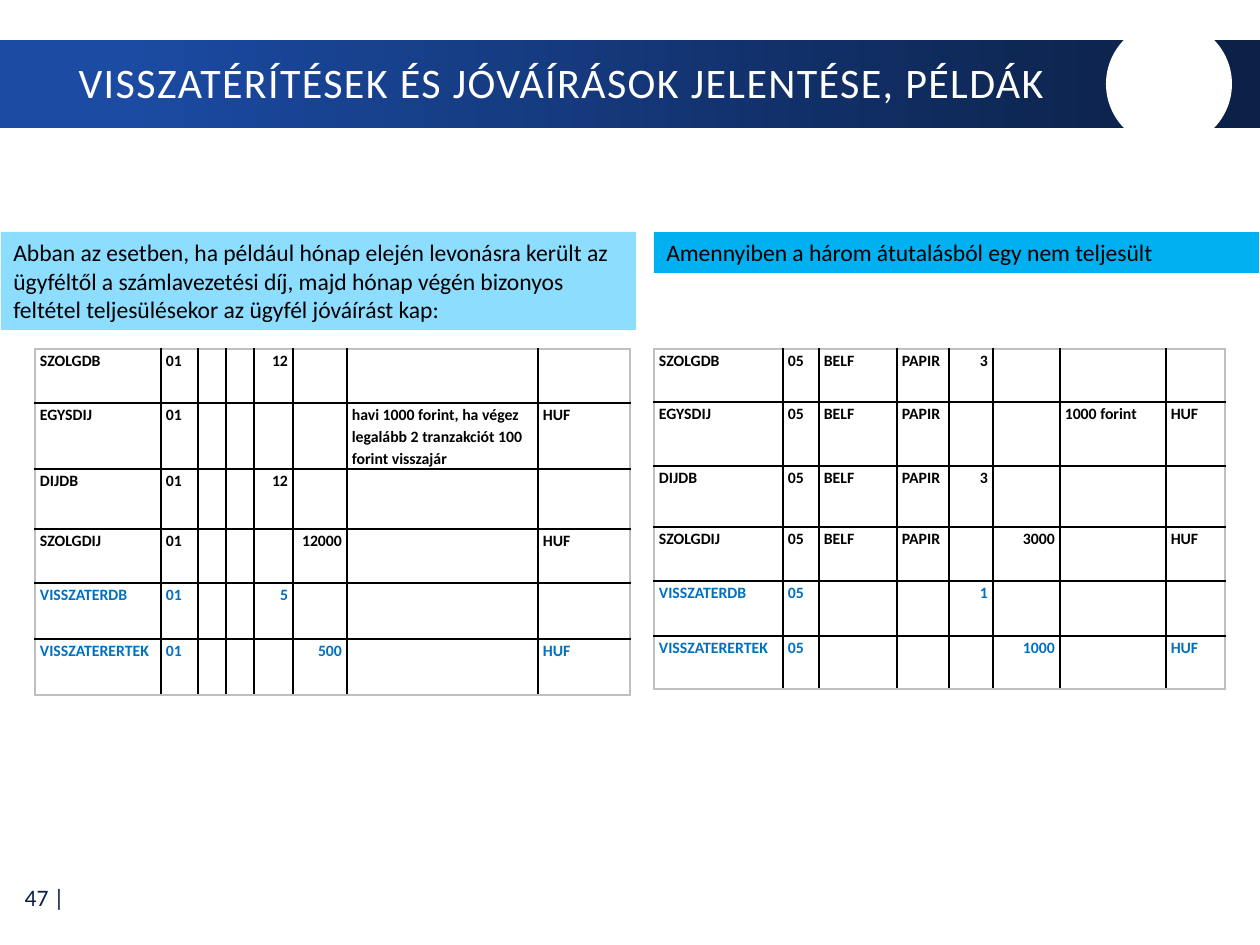
from lxml.etree import SubElement
from pptx import Presentation
from pptx.dml.color import RGBColor
from pptx.enum.shapes import MSO_SHAPE
from pptx.enum.text import MSO_ANCHOR, PP_ALIGN
from pptx.oxml.ns import qn
from pptx.util import Pt

EMU = 914400 / 126
FONT = "Calibri"
NAVY = RGBColor(0x0C, 0x21, 0x48)
ROYAL = RGBColor(0x1B, 0x4B, 0xA3)
PALE = RGBColor(0x8D, 0xDD, 0xFF)
SKY = RGBColor(0x00, 0xB0, 0xF0)
BLUE = RGBColor(0x00, 0x70, 0xC0)
GREY = RGBColor(0xBF, 0xBF, 0xBF)
BLACK = RGBColor(0, 0, 0)
WHITE = RGBColor(0xFF, 0xFF, 0xFF)


def px(*sizes):
    return [round(size * EMU) for size in sizes]


class Page:
    def __init__(self, deck):
        self.slide = deck.slides.add_slide(deck.slide_layouts[5])
        self.shapes = self.slide.shapes

    def words(self, frame, text, size, color, align=PP_ALIGN.LEFT,
              anchor=MSO_ANCHOR.TOP, bold=False):
        frame.word_wrap = True
        frame.vertical_anchor = anchor
        par = frame.paragraphs[0]
        par.text = text
        par.alignment = align
        font = par.font
        font.name, font.size, font.bold = FONT, Pt(size), bold
        font.color.rgb = color
        return par

    def shape(self, kind, box, color):
        shape = self.shapes.add_shape(kind, *px(*box))
        shape.shadow.inherit = False
        shape.fill.solid()
        shape.fill.fore_color.rgb = color
        shape.line.fill.background()
        return shape

    def banner(self, box):
        fill = self.shape(MSO_SHAPE.RECTANGLE, box, NAVY).fill
        fill.gradient()
        fill.gradient_angle = 0
        for stop, color, place in zip(fill.gradient_stops, (ROYAL, NAVY), (0.09, 0.95)):
            stop.color.rgb = color
            stop.position = place

    def title(self, box, text):
        """Fill the title and lift it above the banner."""
        title = self.shapes.title
        title.left, title.top, title.width, title.height = px(*box)
        par = self.words(title.text_frame, text, 24, WHITE, anchor=MSO_ANCHOR.MIDDLE)
        par.line_spacing = 0.9
        par.runs[0]._r.get_or_add_rPr().set("spc", "80")
        self.shapes._spTree.append(title._element)

    def label(self, box, text):
        frame = self.shapes.add_textbox(*px(*box)).text_frame
        self.words(frame, text, 13.5, NAVY, PP_ALIGN.RIGHT, MSO_ANCHOR.MIDDLE)

    def note(self, box, text, color):
        shape = self.shape(MSO_SHAPE.RECTANGLE, box, color)
        self.words(shape.text_frame, text, 13.5, BLACK)

    def border(self, cell, outer):
        """Draw four cell edges, grey for those on the table's rim."""
        props = cell._tc.get_or_add_tcPr()
        for side, rim in zip("LRTB", outer):
            line = SubElement(props, qn("a:ln" + side), w="12700")
            fill = SubElement(line, qn("a:solidFill"))
            SubElement(fill, qn("a:srgbClr"), val=str(GREY if rim else BLACK))

    def table(self, left, top, cols, rows, data):
        """Add a grid; columns 4 and 5 hold figures, the last two rows are blue."""
        table = self.shapes.add_table(len(rows), len(cols), *px(
            left, top, sum(cols), sum(rows))).table
        table.first_row = table.horz_banding = False
        for col, width in zip(table.columns, px(*cols)):
            col.width = width
        for row, height in zip(table.rows, px(*rows)):
            row.height = height
        for i, line in enumerate(data):
            for j, text in enumerate(line):
                cell = table.cell(i, j)
                self.border(cell, (j == 0, j == len(cols) - 1,
                                   i == 0, i == len(rows) - 1))
                cell.fill.background()
                cell.margin_left = cell.margin_right = px(5)[0]
                cell.margin_top = cell.margin_bottom = 0
                par = self.words(cell.text_frame, text, 9,
                                 BLUE if i >= len(rows) - 2 else BLACK,
                                 PP_ALIGN.RIGHT if j in (4, 5) else PP_ALIGN.LEFT,
                                 bold=True)
                par.line_spacing = 1.15
                par.space_after = Pt(7.5)


FEES = [
    ("SZOLGDB", "01", "", "", "12", "", "", ""),
    ("EGYSDIJ", "01", "", "", "", "",
     "havi 1000 forint, ha végez legalább 2 tranzakciót 100 forint visszajár", "HUF"),
    ("DIJDB", "01", "", "", "12", "", "", ""),
    ("SZOLGDIJ", "01", "", "", "", "12000", "", "HUF"),
    ("VISSZATERDB", "01", "", "", "5", "", "", ""),
    ("VISSZATERERTEK", "01", "", "", "", "500", "", "HUF"),
]
WIRES = [
    ("SZOLGDB", "05", "BELF", "PAPIR", "3", "", "", ""),
    ("EGYSDIJ", "05", "BELF", "PAPIR", "", "", "1000 forint", "HUF"),
    ("DIJDB", "05", "BELF", "PAPIR", "3", "", "", ""),
    ("SZOLGDIJ", "05", "BELF", "PAPIR", "", "3000", "", "HUF"),
    ("VISSZATERDB", "05", "", "", "1", "", "", ""),
    ("VISSZATERERTEK", "05", "", "", "", "1000", "", "HUF"),
]


def main():
    deck = Presentation()
    deck.slide_width, deck.slide_height = px(1260, 945)
    page = Page(deck)
    page.label((1, 874, 76, 47), "47 |")
    page.banner((0, 40, 1260, 88))
    page.shape(MSO_SHAPE.OVAL, (1106, 21, 126, 126), WHITE)
    page.title((66, 43, 1048, 84), "VISSZATÉRÍTÉSEK ÉS JÓVÁÍRÁSOK JELENTÉSE, PÉLDÁK")
    page.note((1, 232, 635, 98),
              "Abban az esetben, ha például hónap elején levonásra került az "
              "ügyféltől a számlavezetési díj, majd hónap végén bizonyos "
              "feltétel teljesülésekor az ügyfél jóváírást kap:", PALE)
    page.table(35, 349, (126, 37, 28, 28, 39, 54, 191, 92),
               (54, 62, 60, 54, 56, 56), FEES)
    page.note((654, 232, 605, 41),
              "Amennyiben a három átutalásból egy nem teljesült", SKY)
    page.table(654, 349, (129, 36, 78, 52, 44, 67, 106, 59),
               (53, 64, 61, 54, 55, 53), WIRES)
    deck.save("out.pptx")


if __name__ == "__main__":
    main()
